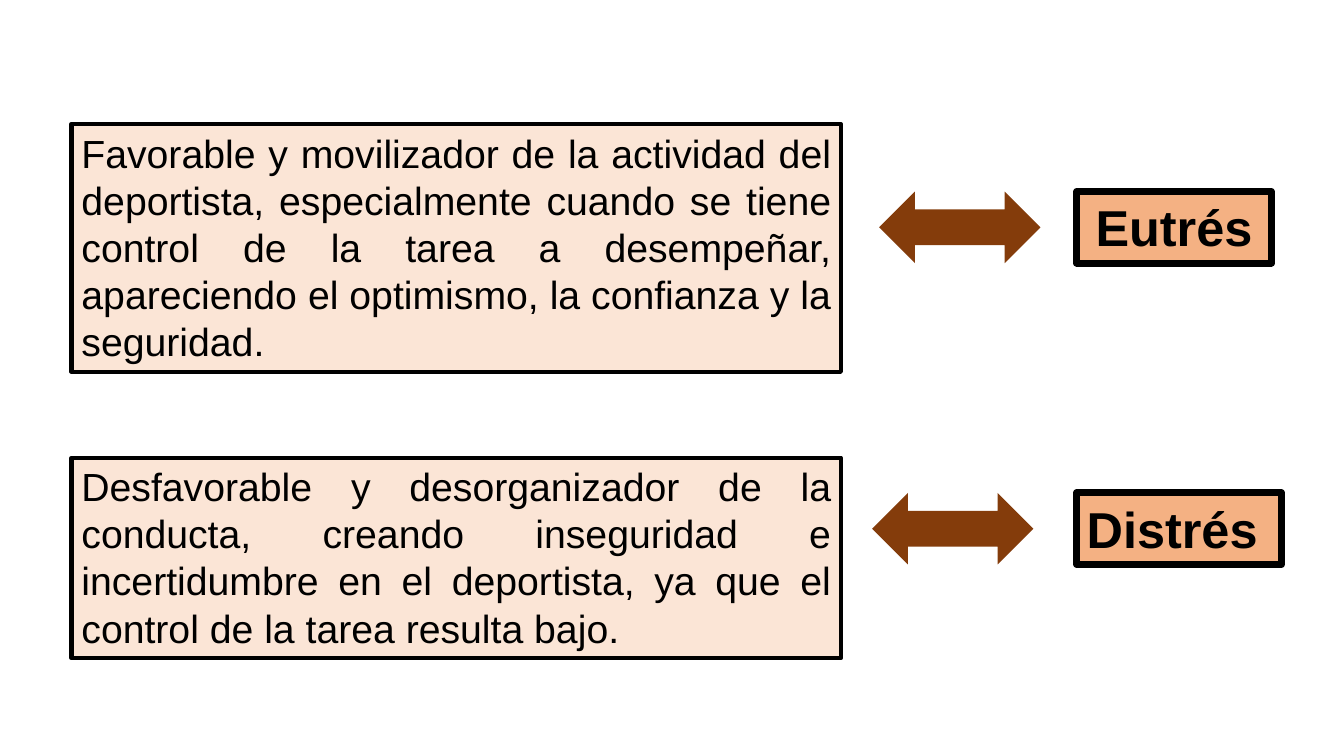
from pptx import Presentation
from pptx.dml.color import RGBColor
from pptx.enum.shapes import MSO_SHAPE
from pptx.enum.text import MSO_ANCHOR, MSO_AUTO_SIZE, PP_ALIGN
from pptx.util import Emu, Pt

DOUBLE_ARROW = MSO_SHAPE.LEFT_RIGHT_ARROW
TOP = MSO_ANCHOR.TOP
GROW = MSO_AUTO_SIZE.SHAPE_TO_FIT_TEXT
LEFT, CENTER, JUSTIFY = PP_ALIGN.LEFT, PP_ALIGN.CENTER, PP_ALIGN.JUSTIFY

THEME = {
    "font": "Arial",
    "ink": RGBColor(0x00, 0x00, 0x00),
    "arrow": RGBColor(0x84, 0x3C, 0x0B),
    "description": {"fill": RGBColor(0xFB, 0xE5, 0xD6), "size": 28, "line": 3, "bold": False},
    "label": {"fill": RGBColor(0xF4, 0xB1, 0x83), "size": 36, "line": 5, "bold": True},
}


def px(*lengths):
    """Turn lengths at 100 px to the inch into EMU."""
    return [Emu(length * 9144) for length in lengths]


def add_framed_text(slide, frame, text, style, alignment):
    box = slide.shapes.add_textbox(*px(*frame))
    box.fill.solid()
    box.fill.fore_color.rgb = style["fill"]
    box.line.color.rgb = THEME["ink"]
    box.line.width = Pt(style["line"])
    box.text_frame.word_wrap = True
    box.text_frame.auto_size = GROW
    box.text_frame.vertical_anchor = TOP
    paragraph = box.text_frame.paragraphs[0]
    paragraph.alignment = alignment
    run = paragraph.add_run()
    run.text = text
    run.font.name = THEME["font"]
    run.font.size = Pt(style["size"])
    run.font.bold = style["bold"]
    run.font.color.rgb = THEME["ink"]


presentation = Presentation()
presentation.slide_width, presentation.slide_height = px(1333, 750)
slide = presentation.slides.add_slide(presentation.slide_layouts[6])

# Descriptions of each kind of stress
descriptions = [
    (123, 246, "Favorable y movilizador de la actividad del deportista, especialmente "
     "cuando se tiene control de la tarea a desempeñar, apareciendo el optimismo, "
     "la confianza y la seguridad."),
    (454, 199, "Desfavorable y desorganizador de la conducta, creando inseguridad e "
     "incertidumbre en el deportista, ya que el control de la tarea resulta bajo."),
]
for top, height, text in descriptions:
    add_framed_text(slide, (71, top, 763, height), text, THEME["description"], JUSTIFY)

# Names, each tied to its description by a double arrow
names = [
    (190, 872, 193, "Eutrés", CENTER),
    (489, 865, 203, "Distrés", LEFT),
]
for top, arrow_left, label_width, name, alignment in names:
    add_framed_text(slide, (1068, top, label_width, 71), name, THEME["label"], alignment)
    arrow = slide.shapes.add_shape(DOUBLE_ARROW, *px(arrow_left, top, 160, 71))
    arrow.shadow.inherit = False
    arrow.fill.solid()
    arrow.fill.fore_color.rgb = THEME["arrow"]
    arrow.line.fill.background()

presentation.save("out.pptx")
